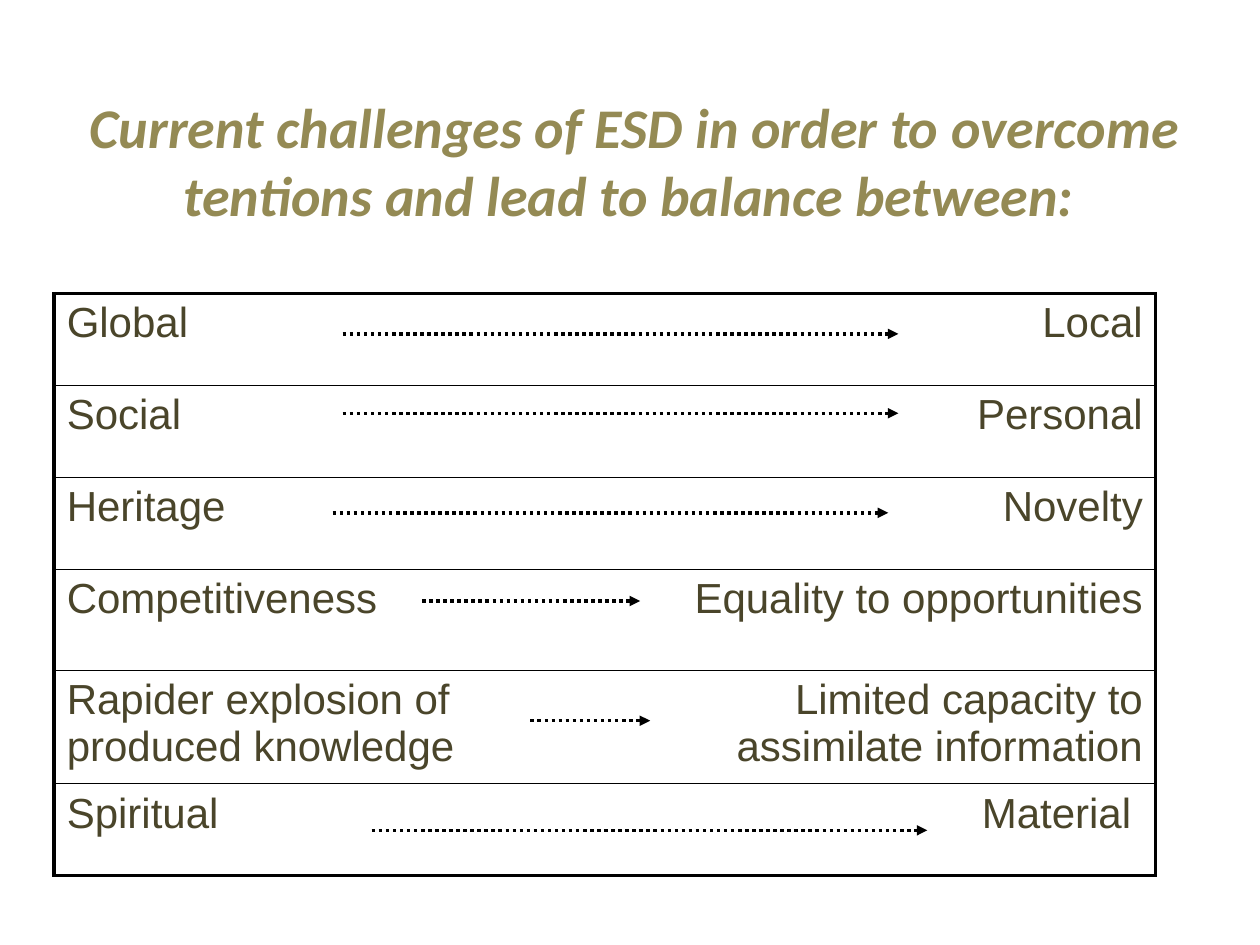
"""Build a slide listing opposing challenges of ESD, joined by dotted arrows."""
from lxml.etree import SubElement
from pptx import Presentation
from pptx.dml.color import RGBColor
from pptx.enum.dml import MSO_LINE
from pptx.enum.shapes import MSO_CONNECTOR
from pptx.enum.text import MSO_ANCHOR, PP_ALIGN
from pptx.oxml.ns import qn
from pptx.util import Inches, Pt

BLACK = RGBColor(0x00, 0x00, 0x00)
OLIVE = RGBColor(0x94, 0x8A, 0x54)
DARK_OLIVE = RGBColor(0x4A, 0x45, 0x2A)

TITLE = "Current challenges of ESD in order to overcome tentions and lead to balance between: "
TITLE_FONT = {"name": "Calibri", "size": Pt(32), "bold": True, "italic": True}
CELL_FONT = {"name": "Arial", "size": Pt(24), "bold": False}

TENSIONS = [
    ("Global", "Local"),
    ("Social", "Personal"),
    ("Heritage", "Novelty"),
    ("Competitiveness", "Equality to opportunities"),
    ("Rapider explosion of produced knowledge", "Limited capacity to assimilate information"),
    ("Spiritual", "Material "),
]
COLUMN_WIDTHS = [4.41, 4.33]
ROW_HEIGHTS = [0.73, 0.73, 0.73, 0.8, 0.84, 0.73]
TABLE_LEFT, TABLE_TOP = 0.43, 2.33
LONG = 4.41
ARROWS = [
    (2.72, 2.65, LONG),
    (2.72, 3.28, LONG),
    (2.64, 4.07, LONG),
    (3.35, 4.77, 1.73),
    (4.21, 5.72, 0.95),
    (2.95, 6.59, LONG),
]
OUTER, INNER = 2.25, 1


def write(frame, text, align, font, color):
    """Put one formatted paragraph in a text frame."""
    para = frame.paragraphs[0]
    para.alignment = align
    span = para.add_run()
    span.text = text
    for name, value in font.items():
        setattr(span.font, name, value)
    span.font.color.rgb = color


def set_border(cell, side, width):
    """Draw one side of a cell, or hide it when the width is zero."""
    properties = cell._tc.get_or_add_tcPr()
    line = SubElement(properties, qn(f"a:ln{side}"), w=str(Pt(width)))
    if width:
        fill = SubElement(line, qn("a:solidFill"))
        SubElement(fill, qn("a:srgbClr"), val=str(BLACK))
    else:
        SubElement(line, qn("a:noFill"))


def add_title(page):
    box = page.shapes.add_textbox(Inches(0.08), Inches(0.68), Inches(9.92), Inches(1.18))
    box.text_frame.word_wrap = True
    box.text_frame.vertical_anchor = MSO_ANCHOR.MIDDLE
    write(box.text_frame, TITLE, PP_ALIGN.CENTER, TITLE_FONT, OLIVE)


def add_tensions(page):
    rows, columns = len(ROW_HEIGHTS), len(COLUMN_WIDTHS)
    table = page.shapes.add_table(
        rows, columns, Inches(TABLE_LEFT), Inches(TABLE_TOP),
        Inches(sum(COLUMN_WIDTHS)), Inches(sum(ROW_HEIGHTS))).table
    table.first_row = table.horz_banding = False
    for column, width in zip(table.columns, COLUMN_WIDTHS):
        column.width = Inches(width)
    for row, height in zip(table.rows, ROW_HEIGHTS):
        row.height = Inches(height)
    for r, words in enumerate(TENSIONS):
        for c, (word, align) in enumerate(zip(words, (PP_ALIGN.LEFT, PP_ALIGN.RIGHT))):
            cell = table.cell(r, c)
            write(cell.text_frame, word, align, CELL_FONT, DARK_OLIVE)
            borders = {
                "L": OUTER if c == 0 else 0,
                "R": OUTER if c == columns - 1 else 0,
                "T": OUTER if r == 0 else INNER,
                "B": OUTER if r == rows - 1 else INNER,
            }
            for side, width in borders.items():
                set_border(cell, side, width)
            cell.fill.background()


def add_arrow(page, left, top, length):
    arrow = page.shapes.add_connector(
        MSO_CONNECTOR.STRAIGHT, Inches(left), Inches(top), Inches(left + length), Inches(top))
    arrow.line.color.rgb = BLACK
    arrow.line.width = Pt(2)
    arrow.line.dash_style = MSO_LINE.ROUND_DOT
    SubElement(arrow.line._get_or_add_ln(), qn("a:tailEnd"), type="triangle")
    SubElement(arrow._element.spPr, qn("a:effectLst"))


def main():
    deck = Presentation()
    deck.slide_width, deck.slide_height = Inches(10), Inches(7.5)
    page = deck.slides.add_slide(deck.slide_layouts[6])
    add_title(page)
    add_tensions(page)
    for arrow in ARROWS:
        add_arrow(page, *arrow)
    deck.save("out.pptx")


if __name__ == "__main__":
    main()
